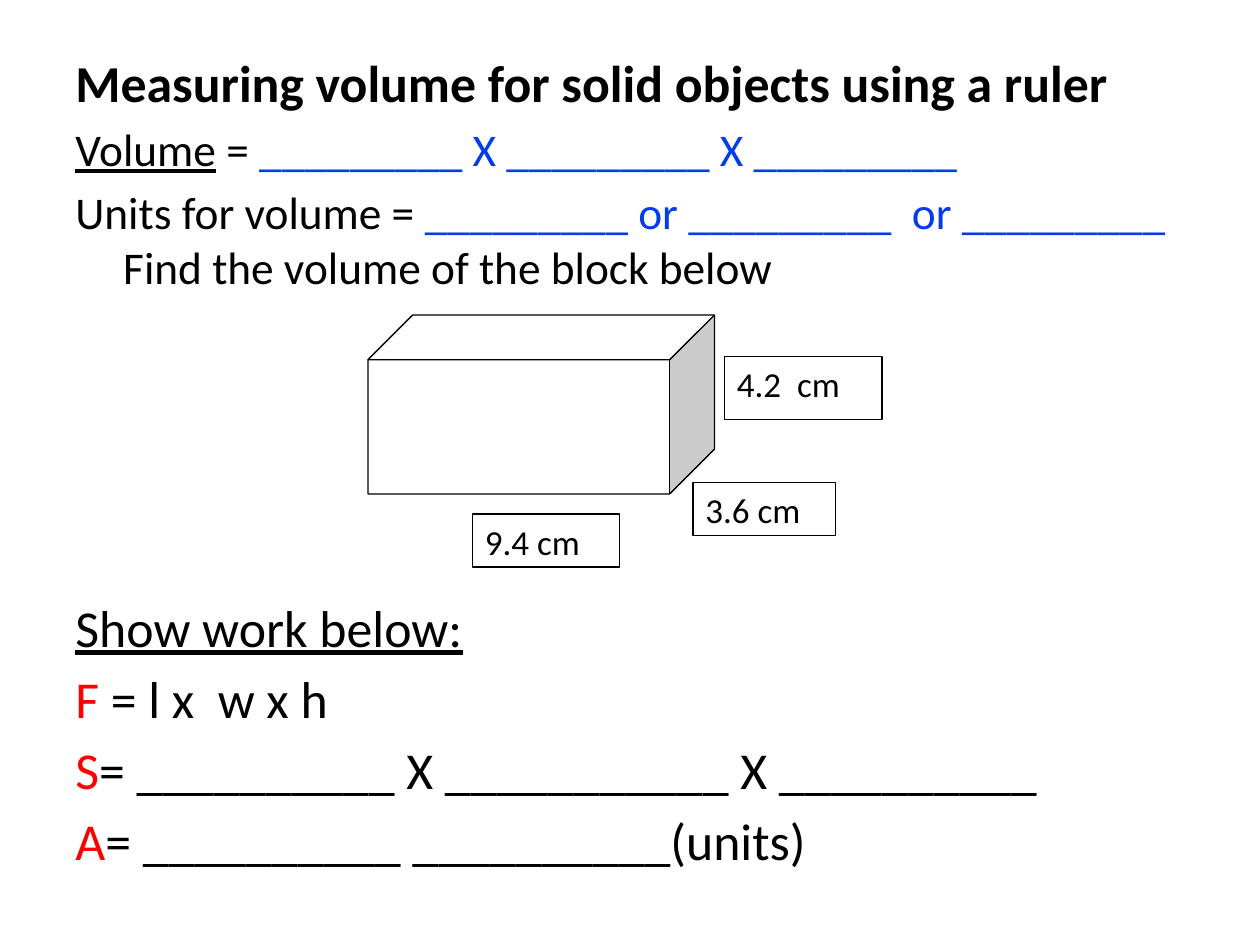
"""Build a worksheet slide on measuring the volume of a solid block."""
from dataclasses import dataclass
from pptx import Presentation
from pptx.dml.color import RGBColor
from pptx.enum.shapes import MSO_SHAPE
from pptx.enum.text import MSO_ANCHOR, PP_ALIGN
from pptx.util import Inches, Pt


@dataclass(frozen=True)
class Theme:
    font: str = "Calibri"
    black: str = "000000"
    white: str = "FFFFFF"
    blue: str = "033BEF"
    red: str = "FF0000"
    large: float = 29.6
    body: float = 25.9
    label: float = 20


theme = Theme()


def write(para, text, size=theme.large, color=theme.black, bold=False, under=False):
    run = para.add_run()
    run.text = text
    font = run.font
    font.name, font.size = theme.font, Pt(size)
    font.bold, font.underline = bold, under
    font.color.rgb = RGBColor.from_string(color)


def draw(kind, left, top, width, height):
    shape = slide.shapes.add_shape(
        kind, Inches(left), Inches(top), Inches(width), Inches(height))
    shape.shadow.inherit = False
    shape.fill.solid()
    shape.fill.fore_color.rgb = RGBColor.from_string(theme.white)
    shape.line.color.rgb = RGBColor.from_string(theme.black)
    shape.line.width = Pt(0.75)
    return shape


deck = Presentation()
deck.slide_width, deck.slide_height = Inches(10), Inches(7.5)
slide = deck.slides.add_slide(deck.slide_layouts[6])

body = {"size": theme.body}
blue = {"size": theme.body, "color": theme.blue}
red = {"color": theme.red}
intro = [
    [("Measuring volume for solid objects using a ruler", {"bold": True})],
    [("Volume", {"size": theme.body, "under": True}), (" = ", body),
     ("_________ X _________ X _________", blue)],
    [("Units for volume = ", body),
     ("_________ or _________  or _________ ", blue),
     ("Find the volume of the block below", body)],
]
work = [
    [("Show work below:", {"under": True})],
    [("F", red), (" = l x  w x h", {})],
    [("S", red), ("= __________ X ___________ X __________", {})],
    [("A", red), ("= __________ __________(units)", {})],
]

for top, height, lines in [(0.35, 2.1, intro), (4.68, 2.48, work)]:
    box = slide.shapes.add_textbox(Inches(0.5), Inches(top), Inches(9), Inches(height))
    frame = box.text_frame
    frame.word_wrap = True
    for row, line in enumerate(lines):
        para = frame.add_paragraph() if row else frame.paragraphs[0]
        para.space_before = Pt(5 if row else 0)
        props = para._p.get_or_add_pPr()
        props.set("marL", str(Inches(0.38)))
        props.set("indent", str(-Inches(0.38)))
        for text, style in line:
            write(para, text, **style)

block = draw(MSO_SHAPE.CUBE, 2.92, 2.5, 2.75, 1.42)
block.adjustments[0] = 0.25

sizes = [
    ("4.2  cm", 5.75, 2.83, 1.25, 0.5),
    ("3.6 cm", 5.5, 3.83, 1.13, 0.42),
    ("9.4 cm", 3.75, 4.08, 1.17, 0.42),
]
for text, *place in sizes:
    label = draw(MSO_SHAPE.RECTANGLE, *place)
    frame = label.text_frame
    frame.vertical_anchor = MSO_ANCHOR.TOP
    para = frame.paragraphs[0]
    para.alignment = PP_ALIGN.LEFT
    para.space_after = Pt(10)
    write(para, text, size=theme.label)

deck.save("out.pptx")
